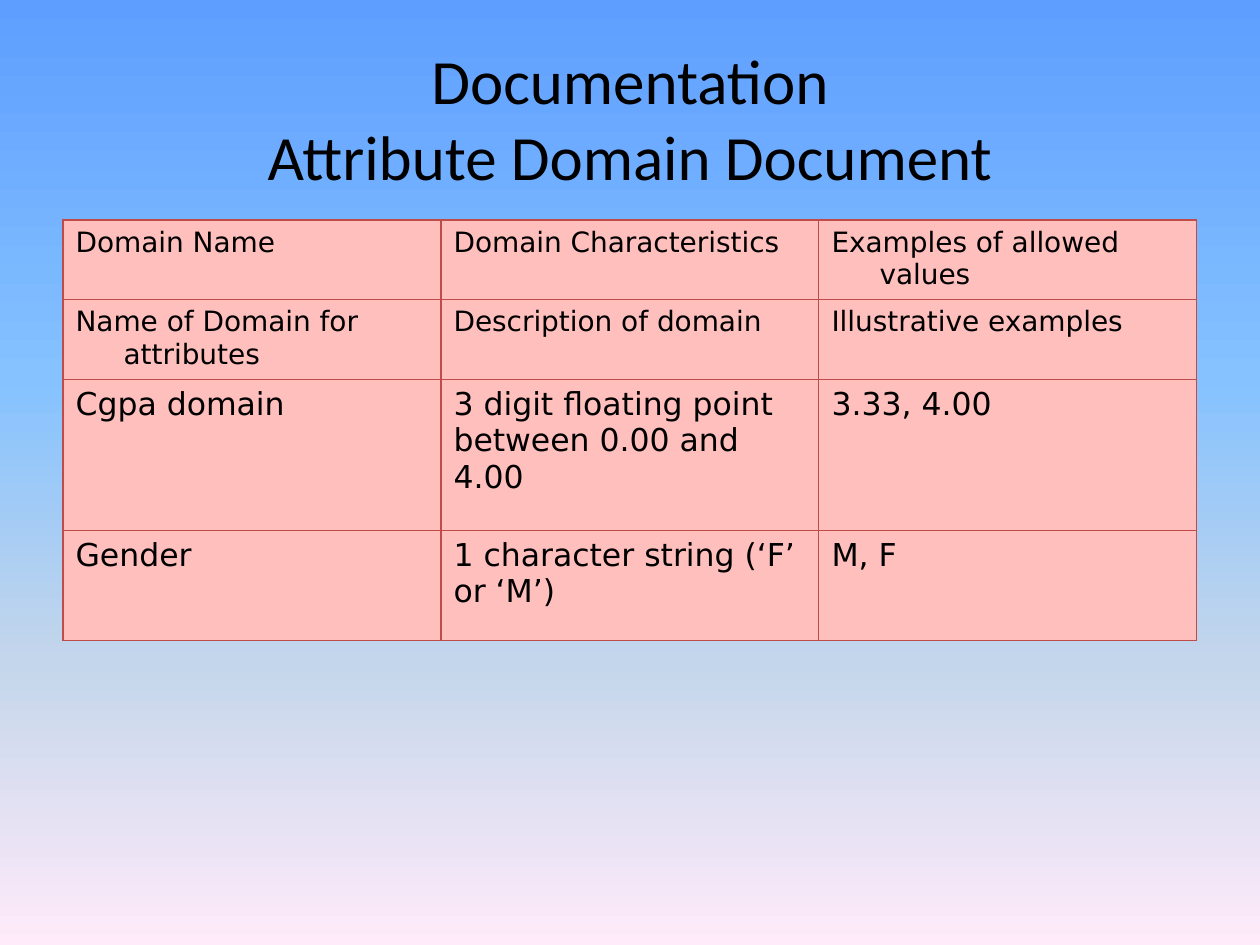
from lxml.etree import SubElement
from pptx import Presentation
from pptx.dml.color import RGBColor
from pptx.enum.text import MSO_ANCHOR, PP_ALIGN
from pptx.oxml.ns import qn
from pptx.util import Emu, Pt

PX = 914400 // 126
BLACK = "000000"
CELL_FILL = "FFBFBD"
BORDER = "BF4C48"
STOPS = [(0, "5E9EFF"), (40, "85C2FF"), (70, "C4D6EB"), (100, "FFEBFA")]
ROW_HEIGHTS = [73, 69, 151, 110]
ROWS = [
    ["Domain Name", "Domain Characteristics", "Examples of allowed values"],
    ["Name of Domain for attributes", "Description of domain", "Illustrative examples"],
    ["Cgpa domain", "3 digit floating point between 0.00 and 4.00", "3.33, 4.00"],
    ["Gender", "1 character string (‘F’ or ‘M’)", "M, F"],
]
HEADING_ROWS = 2
HANGING = 48


def px(n):
    return Emu(n * PX)


def rgb(color):
    return RGBColor.from_string(color)


class SlideBuilder:
    """Draws styled elements on the current slide."""

    def __init__(self, prs):
        self.s = prs.slides.add_slide(prs.slide_layouts[6])
        self.title_font = "Calibri"
        self.table_font = "DejaVu Sans"

    def background(self, stops):
        fill = self.s.background.fill
        fill.gradient()
        fill.gradient_angle = 270
        gs_list = self.s.element.find(".//" + qn("a:gsLst"))
        gs_list.clear()
        for percent, color in stops:
            gs = SubElement(gs_list, qn("a:gs"), pos=str(percent * 1000))
            SubElement(gs, qn("a:srgbClr"), val=color)

    def font(self, p, name, size):
        p.font.name = name
        p.font.size = Pt(size)
        p.font.color.rgb = rgb(BLACK)

    def title(self, text, x, y, w, h):
        tf = self.s.shapes.add_textbox(px(x), px(y), px(w), px(h)).text_frame
        tf.word_wrap = True
        tf.vertical_anchor = MSO_ANCHOR.MIDDLE
        p = tf.paragraphs[0]
        p.text = text
        p.alignment = PP_ALIGN.CENTER
        self.font(p, self.title_font, 36)

    def table(self, rows, heights, x, y, w):
        shape = self.s.shapes.add_table(
            len(rows), len(rows[0]), px(x), px(y), px(w), px(sum(heights)))
        table = shape.table
        for i, (row, height) in enumerate(zip(rows, heights)):
            table.rows[i].height = px(height)
            for j, text in enumerate(row):
                self.cell(table.cell(i, j), text, i < HEADING_ROWS)

    def cell(self, cell, text, heading):
        p = cell.text_frame.paragraphs[0]
        p.text = text
        self.font(p, self.table_font, 16 if heading else 18)
        if heading:
            pPr = p._p.get_or_add_pPr()
            pPr.set("marL", str(px(HANGING)))
            pPr.set("indent", str(-px(HANGING)))
        self.borders(cell)
        cell.fill.solid()
        cell.fill.fore_color.rgb = rgb(CELL_FILL)

    def borders(self, cell):
        tcPr = cell._tc.get_or_add_tcPr()
        for side in ("lnL", "lnR", "lnT", "lnB"):
            ln = SubElement(tcPr, qn("a:" + side), w=str(Pt(0.75)))
            fill = SubElement(ln, qn("a:solidFill"))
            SubElement(fill, qn("a:srgbClr"), val=BORDER)


def main():
    prs = Presentation()
    prs.slide_width, prs.slide_height = px(1260), px(945)
    slide = SlideBuilder(prs)
    slide.background(STOPS)
    slide.title("Documentation\vAttribute Domain Document", 63, 38, 1134, 158)
    slide.table(ROWS, ROW_HEIGHTS, 63, 220, 1134)
    prs.save("out.pptx")


if __name__ == "__main__":
    main()
